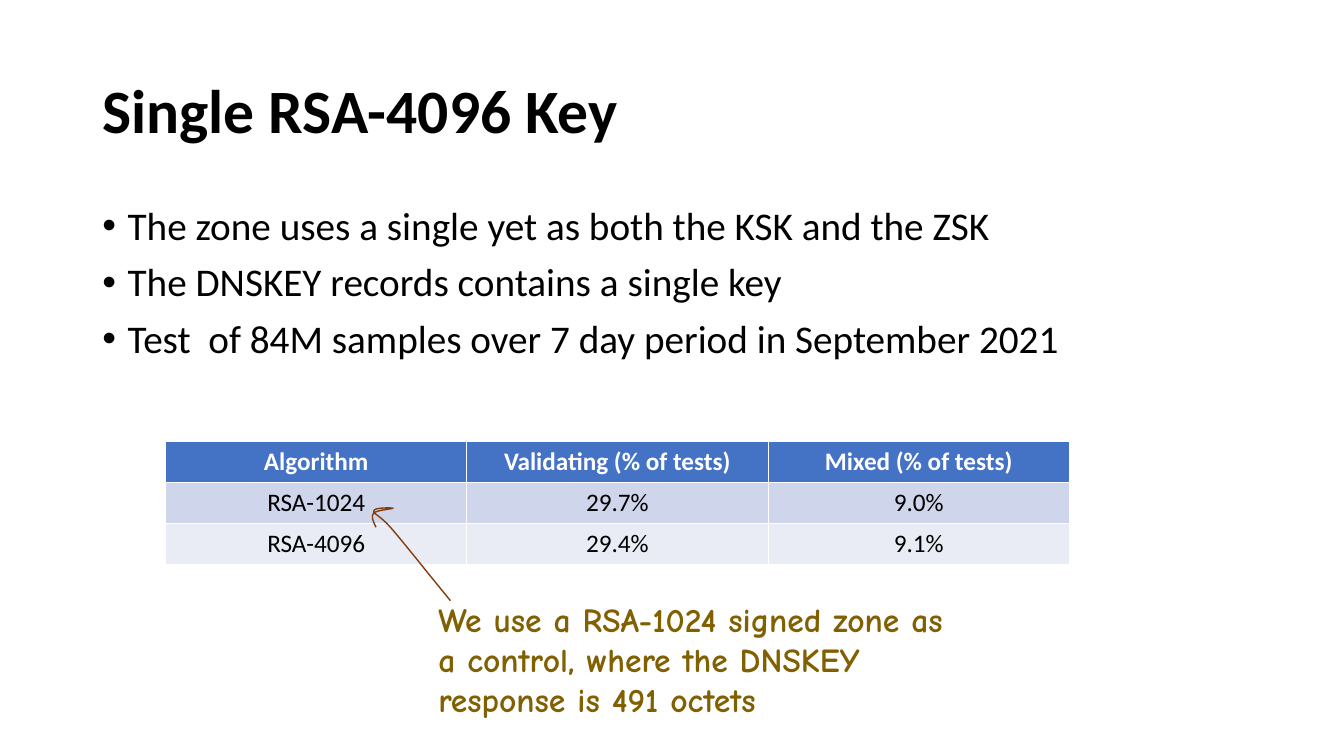
from dataclasses import dataclass, field
from typing import Any

from pptx import Presentation
from pptx.dml.color import RGBColor
from pptx.enum.text import MSO_ANCHOR as Anchor, MSO_AUTO_SIZE as AutoSize, PP_ALIGN as Align
from pptx.util import Pt

Point = tuple[float, float]
Box = tuple[float, float, float, float]


@dataclass
class TextBlock:
    lines: list[str]
    box: Box
    font: dict[str, Any]
    color: str = "000000"
    para: dict[str, Any] = field(default_factory=dict)
    frame: dict[str, Any] = field(default_factory=dict)
    indent: float = 0


@dataclass
class TableRow:
    cells: list[str]
    fill: str
    color: str = "000000"
    bold: bool = False


TITLE = TextBlock(
    ["Single RSA-4096 Key"], (66, 28.8, 828, 104.4),
    {"name": "Calibri", "size": Pt(44), "bold": True},
    para={"alignment": Align.LEFT, "line_spacing": 0.9},
    frame={"vertical_anchor": Anchor.MIDDLE, "auto_size": AutoSize.NONE},
)
BODY = TextBlock(
    ["The zone uses a single yet as both the KSK and the ZSK",
     "The DNSKEY records contains a single key",
     "Test  of 84M samples over 7 day period in September 2021"],
    (66, 144, 828, 342.6),
    {"name": "Calibri", "size": Pt(28)},
    para={"line_spacing": 0.9, "space_before": Pt(10)},
    frame={"auto_size": AutoSize.NONE},
    indent=18,
)
NOTE = TextBlock(
    ["We use a RSA-1024 signed zone as a control, where the DNSKEY response is 491 octets"],
    (306, 424.1, 377.3, 65.5),
    {"name": "Comic Neue", "size": Pt(24), "bold": True},
    color="806000",
    frame={"word_wrap": True, "auto_size": AutoSize.SHAPE_TO_FIT_TEXT},
)
ROWS = [
    TableRow(["Algorithm", "Validating (% of tests)", "Mixed (% of tests)"], "4472C4", "FFFFFF", True),
    TableRow(["RSA-1024", "29.7%", "9.0%"], "CFD5EA"),
    TableRow(["RSA-4096", "29.4%", "9.1%"], "E9EBF5"),
]
TABLE_BOX = (118.3, 315.4, 645.6, 87.6)
ARROW_START = (321.8, 429.1)
ARROW_CURVES = [
    ((305.3, 409), (289.4, 388.8), (280.1, 378)),
    ((270.7, 367.2), (266.4, 367.2), (267.1, 365)),
    ((267.1, 362.2), (280.8, 362.9), (280.8, 362.9)),
    ((280.8, 363.6), (269.3, 364.3), (267.1, 366.5)),
    ((265, 368.6), (266.4, 372.2), (268.6, 376.6)),
]


def set_all(obj: Any, values: dict[str, Any]) -> None:
    for name, value in values.items():
        setattr(obj, name, value)


def paint(fmt: Any, color: str) -> None:
    fmt.solid()
    fmt.fore_color.rgb = RGBColor.from_string(color)


def write_text(sp: Any, block: TextBlock) -> None:
    set_all(sp, dict(zip(("left", "top", "width", "height"), map(Pt, block.box))))
    tf = sp.text_frame
    set_all(tf, block.frame)
    tf.text = "\n".join(block.lines)
    for p in tf.paragraphs:
        set_all(p, block.para)
        if block.indent:
            pPr = p._p.get_or_add_pPr()
            pPr.set("marL", str(Pt(block.indent)))
            pPr.set("indent", str(-Pt(block.indent)))
        for r in p.runs:
            set_all(r.font, block.font)
            paint(r.font.fill, block.color)


def draw_table(slide: Any, rows: list[TableRow], box: Box) -> None:
    table = slide.shapes.add_table(len(rows), len(rows[0].cells), *map(Pt, box)).table
    for i, row in enumerate(rows):
        for j, text in enumerate(row.cells):
            cell = table.cell(i, j)
            paint(cell.fill, row.fill)
            p = cell.text_frame.paragraphs[0]
            p.alignment = Align.CENTER
            r = p.add_run()
            r.text = text
            set_all(r.font, {"name": "Calibri", "size": Pt(18), "bold": row.bold})
            paint(r.font.fill, row.color)


def bezier(points: list[Point], steps: int = 12) -> list[Point]:
    weights = (1, 3, 3, 1)
    return [
        tuple(
            sum(w * (1 - t) ** (3 - k) * t ** k * pt[axis]
                for k, (w, pt) in enumerate(zip(weights, points)))
            for axis in (0, 1)
        )
        for t in (n / steps for n in range(1, steps + 1))
    ]


def draw_arrow(slide: Any, start: Point, curves: list[tuple[Point, ...]], color: str) -> None:
    builder = slide.shapes.build_freeform(*map(Pt, start))
    for curve in curves:
        builder.add_line_segments([(Pt(x), Pt(y)) for x, y in bezier([start, *curve])], close=False)
        start = curve[-1]
    sp = builder.convert_to_shape()
    sp.shadow.inherit = False
    sp.fill.background()
    paint(sp.line.fill, color)
    sp.line.width = Pt(1)


def main() -> None:
    prs = Presentation()
    set_all(prs, {"slide_width": Pt(960), "slide_height": Pt(540)})
    slide = prs.slides.add_slide(prs.slide_layouts[1])
    write_text(slide.shapes.title, TITLE)
    write_text(slide.placeholders[1], BODY)
    draw_table(slide, ROWS, TABLE_BOX)
    write_text(slide.shapes.add_textbox(*map(Pt, NOTE.box)), NOTE)
    draw_arrow(slide, ARROW_START, ARROW_CURVES, "843C0B")
    prs.save("out.pptx")


if __name__ == "__main__":
    main()
